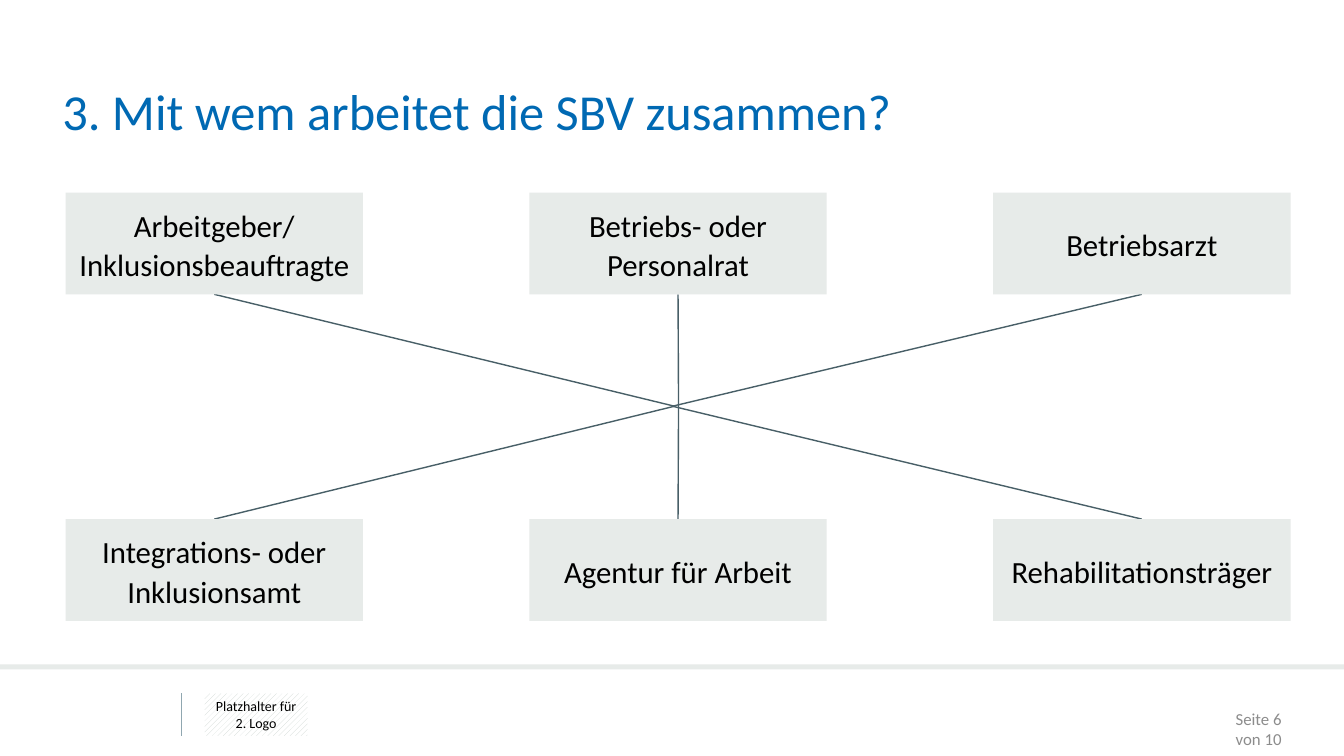
from lxml import etree
from pptx import Presentation
from pptx.dml.color import RGBColor
from pptx.enum.dml import MSO_PATTERN
from pptx.enum.shapes import MSO_CONNECTOR, MSO_SHAPE
from pptx.enum.text import MSO_ANCHOR, PP_ALIGN
from pptx.oxml.ns import qn
from pptx.util import Inches, Pt

RECTANGLE = MSO_SHAPE.RECTANGLE
STRAIGHT = MSO_CONNECTOR.STRAIGHT
HATCH = MSO_PATTERN.WIDE_UPWARD_DIAGONAL
MIDDLE, BOTTOM = MSO_ANCHOR.MIDDLE, MSO_ANCHOR.BOTTOM
LEFT, CENTER, RIGHT = PP_ALIGN.LEFT, PP_ALIGN.CENTER, PP_ALIGN.RIGHT

BLACK = RGBColor(0x00, 0x00, 0x00)
WHITE = RGBColor(0xFF, 0xFF, 0xFF)
BLUE = RGBColor(0x00, 0x69, 0xB3)
PALE = RGBColor(0xE7, 0xEB, 0xE9)
HATCH_GREY = RGBColor(0xCE, 0xD6, 0xD2)
SLATE = RGBColor(0x48, 0x5F, 0x67)
LIGHT_SLATE = RGBColor(0x90, 0xA7, 0xB0)
GREY = RGBColor(0x8C, 0x8C, 0x8C)

BOX_WIDTH, BOX_HEIGHT = 2.95, 1.01
FIRST_COLUMN, COLUMN_STEP = 0.65, 4.6
TOP_ROW, BOTTOM_ROW = 1.91, 5.15
HUB_Y = 4.03
HUB_X = (6.69, 6.73, 6.67)
PARTNERS = (
    (TOP_ROW, ("Arbeitgeber/ Inklusionsbeauftragte",
               "Betriebs- oder Personalrat", "Betriebsarzt")),
    (BOTTOM_ROW, ("Integrations- oder Inklusionsamt",
                  "Agentur für Arbeit", "Rehabilitationsträger")),
)


class SlideBuilder:
    font_name = "Calibri"

    def __init__(self, slide):
        self.slide = slide

    def label(self, shape, text, size, color, align, anchor=MIDDLE,
              spacing=None, wrap=True):
        frame = shape.text_frame
        frame.text = text
        frame.word_wrap = wrap
        frame.vertical_anchor = anchor
        paragraph = frame.paragraphs[0]
        paragraph.alignment = align
        if spacing:
            paragraph.line_spacing = spacing
        font = paragraph.runs[0].font
        font.name = self.font_name
        font.size = Pt(size)
        font.color.rgb = color

    def rectangle(self, left, top, width, height, color, hatched=False):
        shape = self.slide.shapes.add_shape(
            RECTANGLE, Inches(left), Inches(top), Inches(width), Inches(height))
        shape.shadow.inherit = False
        shape.line.fill.background()
        if hatched:
            shape.fill.patterned()
            shape.fill.pattern = HATCH
            shape.fill.fore_color.rgb = color
            shape.fill.back_color.rgb = WHITE
        else:
            shape.fill.solid()
            shape.fill.fore_color.rgb = color
        return shape

    def text(self, left, top, width, height, text, size, color, align, **style):
        shape = self.slide.shapes.add_textbox(
            Inches(left), Inches(top), Inches(width), Inches(height))
        self.label(shape, text, size, color, align, **style)
        return shape

    def line(self, start, end, color, width):
        points = [Inches(value) for value in (*start, *end)]
        connector = self.slide.shapes.add_connector(STRAIGHT, *points)
        connector.line.color.rgb = color
        connector.line.width = Pt(width)
        etree.SubElement(connector._element.spPr, qn("a:effectLst"))


def main():
    presentation = Presentation()
    presentation.slide_width = Inches(13.33)
    presentation.slide_height = Inches(7.5)
    builder = SlideBuilder(
        presentation.slides.add_slide(presentation.slide_layouts[6]))

    logo_box = builder.rectangle(2.03, 6.88, 1.02, 0.42, HATCH_GREY, hatched=True)
    builder.label(logo_box, "Platzhalter für 2. Logo", 10, BLACK, CENTER)
    builder.line((1.8, 6.88), (1.8, 7.3), LIGHT_SLATE, 0.75)
    builder.rectangle(0, 6.59, 13.33, 0.05, PALE)

    builder.text(0.52, 0.8, 9.51, 0.65, "3. Mit wem arbeitet die SBV zusammen?",
                 36, BLUE, LEFT, anchor=BOTTOM, spacing=0.9)

    for top, names in PARTNERS:
        edge = top + BOX_HEIGHT if top == TOP_ROW else top
        for column, name in enumerate(names):
            left = FIRST_COLUMN + column * COLUMN_STEP
            builder.line((left + BOX_WIDTH / 2, edge), (HUB_X[column], HUB_Y),
                         SLATE, 1)
            box = builder.rectangle(left, top, BOX_WIDTH, BOX_HEIGHT, PALE)
            builder.label(box, name, 22, BLACK, CENTER, spacing=Pt(28))

    builder.text(9.81, 7.03, 3, 0.2, "Seite 6", 12, GREY, RIGHT)
    total = builder.text(12.2, 7.23, 0.61, 0.2, "von 10", 12, GREY, RIGHT,
                         wrap=False)
    frame = total.text_frame
    frame.margin_left = frame.margin_top = frame.margin_bottom = 0

    presentation.save("out.pptx")


if __name__ == "__main__":
    main()
